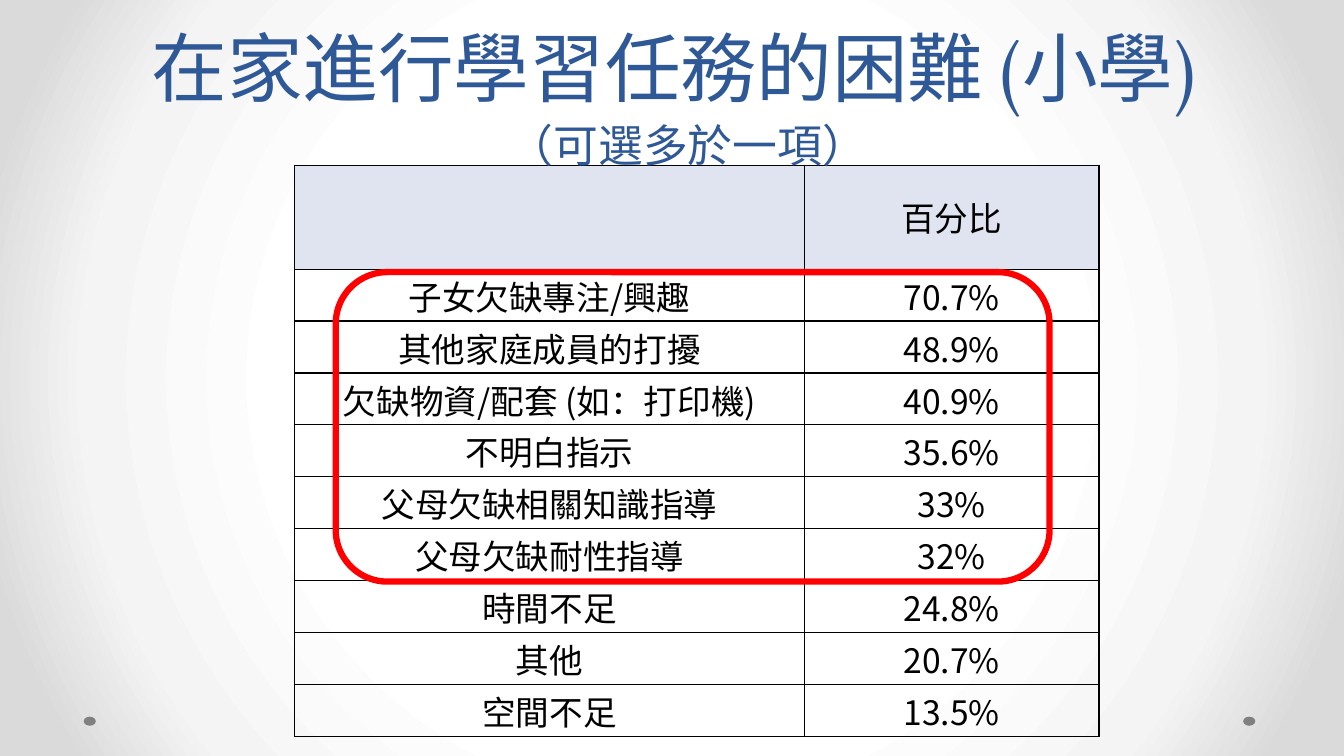
from lxml.etree import SubElement
from pptx import Presentation
from pptx.dml.color import RGBColor
from pptx.enum.shapes import MSO_SHAPE
from pptx.enum.text import MSO_ANCHOR, PP_ALIGN
from pptx.oxml import parse_xml
from pptx.oxml.ns import nsdecls, qn
from pptx.util import Inches, Pt

COLORS = {
    "title": "2F5897", "text": "000000", "border": "000000",
    "head": "DFE4F0", "mark": "FF0000", "dot": "808080",
}
GLOW = [(50, "FFFFFF"), (76, "F4F4F4"), (92, "DADADA")]
SANS = "Noto Sans CJK SC"
ROWS = [
    ("子女欠缺專注/興趣", "70.7%"),
    ("其他家庭成員的打擾", "48.9%"),
    ("欠缺物資/配套 (如：打印機)", "40.9%"),
    ("不明白指示", "35.6%"),
    ("父母欠缺相關知識指導", "33%"),
    ("父母欠缺耐性指導", "32%"),
    ("時間不足", "24.8%"),
    ("其他", "20.7%"),
    ("空間不足", "13.5%"),
]


def color(name):
    return RGBColor.from_string(COLORS[name])


def style(para, size, face, tint):
    para.alignment = PP_ALIGN.CENTER
    para.font.size = Pt(size)
    para.font.name = face
    para.font.color.rgb = color(tint)


def backdrop(slide):
    stops = "".join(
        f'<a:gs pos="{pos * 1000}"><a:srgbClr val="{tint}"/></a:gs>'
        for pos, tint in GLOW)
    slide.background.fill.solid()
    props = slide.background._cSld.bg.bgPr
    props.replace(props[0], parse_xml(
        f'<a:gradFill {nsdecls("a")} rotWithShape="1"><a:gsLst>{stops}</a:gsLst>'
        '<a:path path="circle"><a:fillToRect l="50000" t="50000" r="50000" '
        'b="50000"/></a:path></a:gradFill>'))


def dots(slide, lefts, top):
    for left in lefts:
        dot = slide.shapes.add_shape(
            MSO_SHAPE.OVAL, Inches(left), Inches(top), Inches(0.12), Inches(0.09))
        dot.shadow.inherit = False
        dot.fill.solid()
        dot.fill.fore_color.rgb = color("dot")
        dot.line.fill.background()


def heading(shape, box, text, size):
    shape.left, shape.top, shape.width, shape.height = map(Inches, box)
    frame = shape.text_frame
    frame.word_wrap = True
    frame.vertical_anchor = MSO_ANCHOR.BOTTOM
    para = frame.paragraphs[0]
    para.text = text
    para.line_spacing = Pt(58)
    style(para, size, "Vollkorn", "title")


def border(cell):
    props = cell._tc.get_or_add_tcPr()
    for spot, side in enumerate(("lnL", "lnR", "lnT", "lnB")):
        line = parse_xml(f'<a:{side} {nsdecls("a")} w="12700"/>')
        fill = SubElement(line, qn("a:solidFill"))
        SubElement(fill, qn("a:srgbClr"), val=COLORS["border"])
        props.insert(spot, line)


def write(cell, text, face, pad):
    cell.margin_left = cell.margin_right = cell.margin_top = Inches(pad)
    cell.margin_bottom = 0
    cell.vertical_anchor = MSO_ANCHOR.MIDDLE
    para = cell.text_frame.paragraphs[0]
    para.text = text
    style(para, 24, face, "text")


def survey(slide, box):
    data = [("", "百分比")] + ROWS
    table = slide.shapes.add_table(len(data), 2, *map(Inches, box)).table
    table.first_row = table.horz_banding = False
    for col, width in zip(table.columns, (5.06, 2.92)):
        col.width = Inches(width)
    for r, texts in enumerate(data):
        head = r == 0
        table.rows[r].height = Inches(1.03 if head else 0.515)
        for c, text in enumerate(texts):
            cell = table.cell(r, c)
            write(cell, text, "Arial" if head else SANS, 0 if head else 0.01)
            if head:
                cell.fill.solid()
                cell.fill.fore_color.rgb = color("head")
            else:
                cell.fill.background()
            border(cell)


def marker(slide, box):
    ring = slide.shapes.add_shape(MSO_SHAPE.ROUNDED_RECTANGLE, *map(Inches, box))
    ring.shadow.inherit = False
    ring.fill.background()
    ring.line.color.rgb = color("mark")
    ring.line.width = Pt(4.5)


def main():
    deck = Presentation()
    deck.slide_width, deck.slide_height = Inches(13.33), Inches(7.5)
    slide = deck.slides.add_slide(deck.slide_layouts[5])
    backdrop(slide)
    dots(slide, (0.83, 12.33), 7.11)
    heading(slide.shapes.title, (0.68, -0.59, 12, 1.75),
            "在家進行學習任務的困難 (小學)", 54)
    survey(slide, (2.92, 1.64, 7.98, 5.67))
    marker(slide, (3.33, 2.7, 7.08, 3.07))
    note = slide.shapes.add_textbox(0, 0, 0, 0)
    heading(note, (0.49, 0, 12.67, 1.75), "（可選多於一項）", 32)
    deck.save("out.pptx")


if __name__ == "__main__":
    main()
